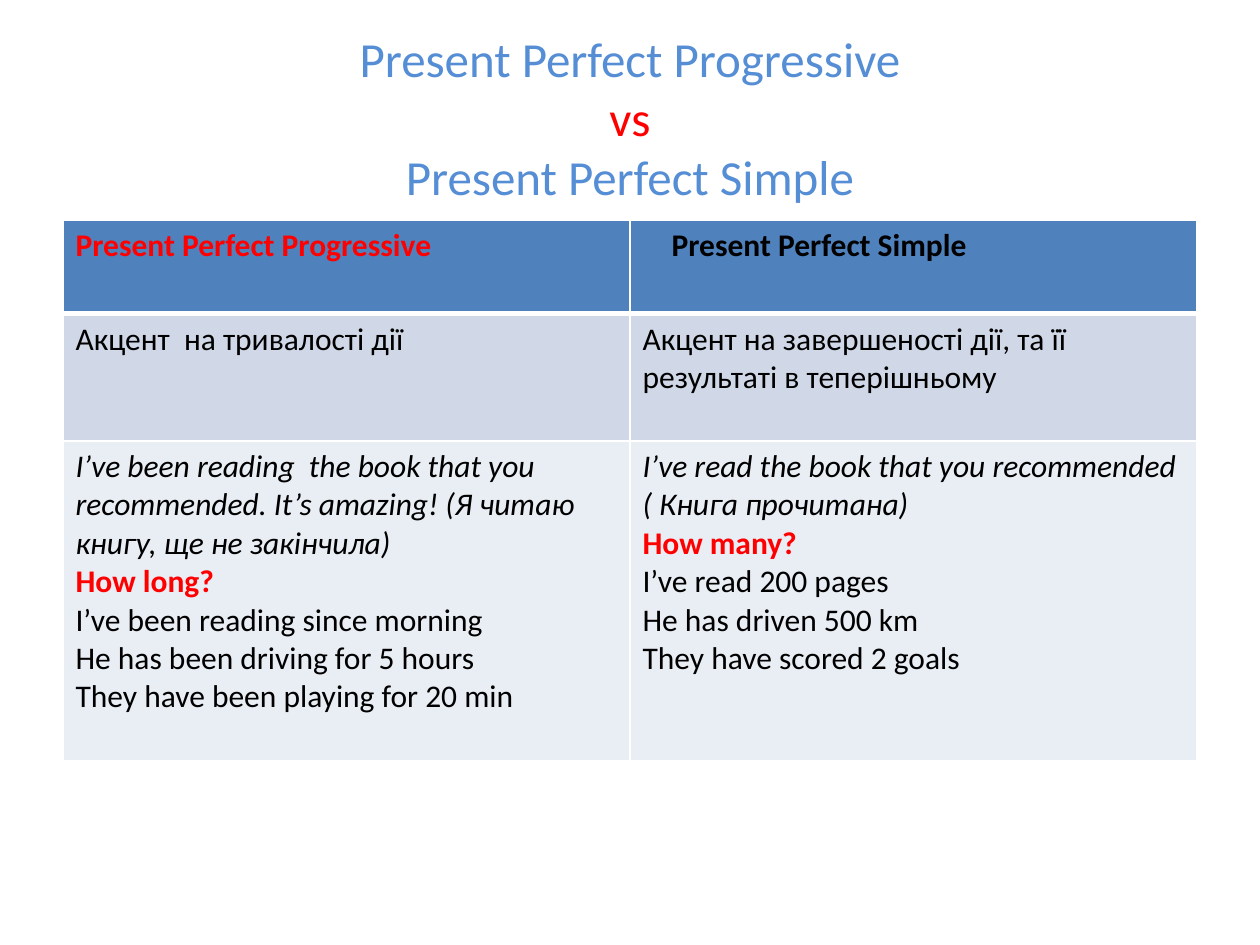
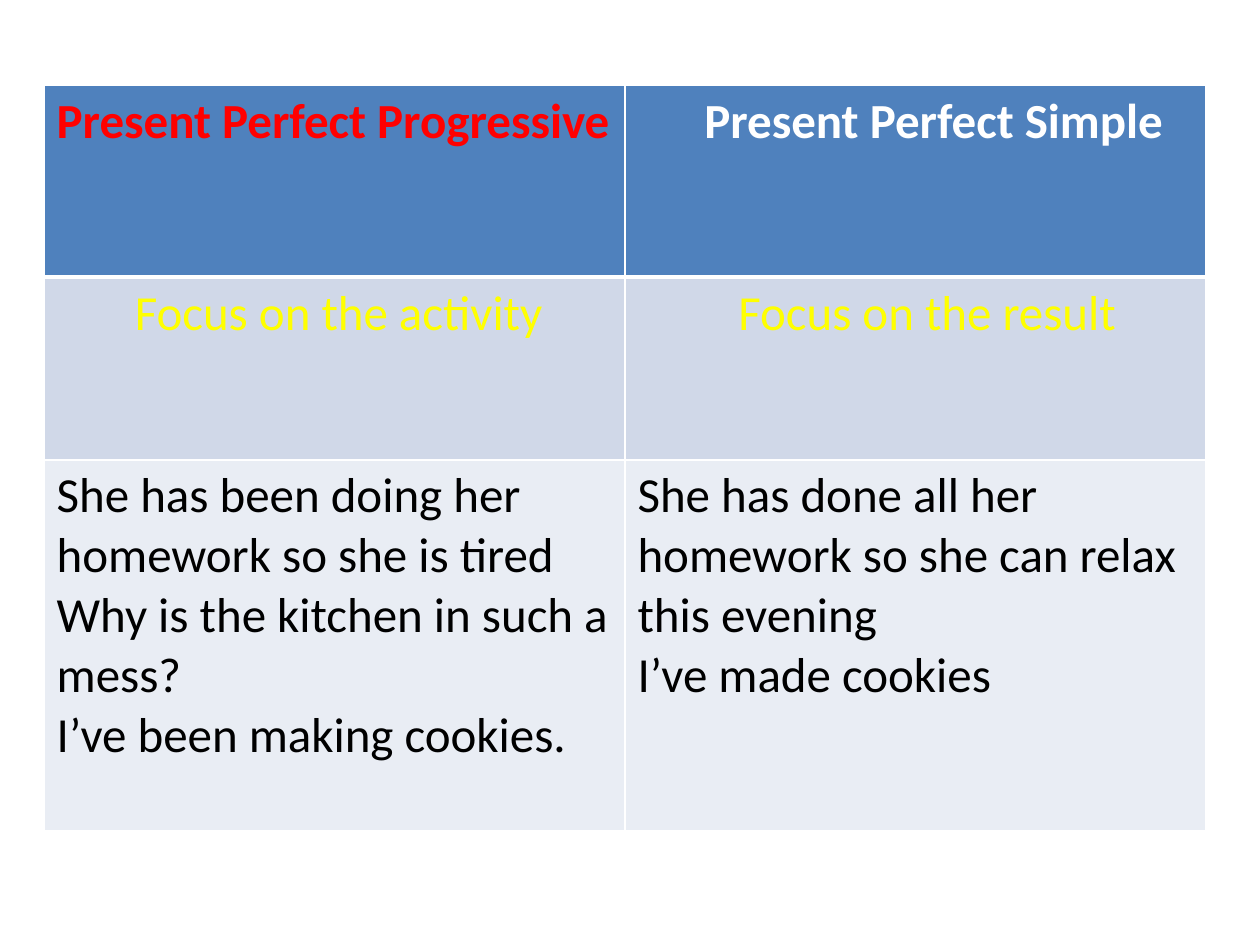
from lxml import etree
from pptx import Presentation
from pptx import util as u
from pptx.dml.color import RGBColor
from pptx.enum import text
from pptx.oxml.ns import qn

C = {
    "title": "558ED5", "red": "FF0000", "black": "000000", "white": "FFFFFF",
    "yellow": "FFFF00", "head": "4F81BD", "band": "D0D8E8", "light": "E9EDF4",
}
FONT = "Calibri"
ROW_FILLS = ["head", "band", "light"]


def write(tf, lines, size, align=text.PP_ALIGN.LEFT):
    tf.text = "\n".join(line[0] for line in lines)
    for p, (_, color, style) in zip(tf.paragraphs, lines):
        p.alignment = align
        f = p.runs[0].font
        f.name, f.size = FONT, u.Pt(size)
        f.bold, f.italic = style == "bold", style == "italic"
        f.color.rgb = RGBColor.from_string(C[color])


def border(cell, row):
    tcPr = cell._tc.get_or_add_tcPr()
    widths = {"lnL": 1, "lnR": 1, "lnT": 3 if row == 1 else 1, "lnB": 3 if row == 0 else 1}
    for i, (side, width) in enumerate(widths.items()):
        ln = etree.Element(qn("a:" + side), w=str(u.Pt(width)))
        fill = etree.SubElement(ln, qn("a:solidFill"))
        etree.SubElement(fill, qn("a:srgbClr"), val=C["white"])
        tcPr.insert(i, ln)


prs = Presentation()
prs.slide_width, prs.slide_height = u.Inches(10), u.Inches(7.5)

tables = [
    {
        "at": (0.5, 1.75), "col": 4.5, "rows": [0.74, 1.01, 2.54], "size": 18,
        "indents": {(0, 1): 0.23},
        "cells": [
            [[("Present Perfect Progressive", "red", "bold")],
             [("Present Perfect Simple", "black", "bold")]],
            [[("Акцент  на тривалості дії", "black", "")],
             [("Акцент на завершеності дії, та її результаті в теперішньому", "black", "")]],
            [[("I’ve been reading  the book that you recommended. It’s amazing! "
               "(Я читаю книгу, ще не закінчила)", "black", "italic"),
              ("How long?", "red", "bold"),
              ("I’ve been reading since morning", "black", ""),
              ("He has been driving for 5 hours", "black", ""),
              ("They have been playing for 20 min", "black", "")],
             [("I’ve read the book that you recommended ( Книга прочитана)", "black", "italic"),
              ("How many?", "red", "bold"),
              ("I’ve read 200 pages", "black", ""),
              ("He has driven 500 km", "black", ""),
              ("They have scored 2 goals", "black", "")]],
        ],
    },
    {
        "at": (0.35, 0.68), "col": 4.61, "rows": [1.52, 1.45, 2.94], "size": 28,
        "indents": {(0, 1): 0.53, (1, 0): 0.62, (1, 1): 0.8},
        "cells": [
            [[("Present Perfect Progressive", "red", "bold")],
             [("Present Perfect Simple", "white", "bold")]],
            [[("Focus on the activity", "yellow", "")],
             [("Focus on the result", "yellow", "")]],
            [[("She has been doing her homework so she is tired", "black", ""),
              ("Why is the kitchen in such a mess?", "black", ""),
              ("I’ve been making cookies.", "black", "")],
             [("She has done all her homework so she can relax this evening", "black", ""),
              ("I’ve made cookies", "black", "")]],
        ],
    },
]

for t in tables:
    s = prs.slides.add_slide(prs.slide_layouts[6])
    left, top = t["at"]
    tbl = s.shapes.add_table(3, 2, u.Inches(left), u.Inches(top),
                             u.Inches(2 * t["col"]), u.Inches(sum(t["rows"]))).table
    for col in tbl.columns:
        col.width = u.Inches(t["col"])
    for r, height in enumerate(t["rows"]):
        tbl.rows[r].height = u.Inches(height)
        for c, lines in enumerate(t["cells"][r]):
            cell = tbl.cell(r, c)
            cell.margin_left = u.Inches(0.1 + t["indents"].get((r, c), 0))
            cell.fill.solid()
            cell.fill.fore_color.rgb = RGBColor.from_string(C[ROW_FILLS[r]])
            border(cell, r)
            write(cell.text_frame, lines, t["size"])

title = prs.slides[0].shapes.add_textbox(u.Inches(0.5), u.Inches(0.3), u.Inches(9), u.Inches(1.25))
tf = title.text_frame
tf.word_wrap = True
tf.vertical_anchor = text.MSO_ANCHOR.MIDDLE
write(tf, [("Present Perfect Progressive", "title", ""), ("vs", "red", ""),
           ("Present Perfect Simple", "title", "")], 28, text.PP_ALIGN.CENTER)

prs.save("out.pptx")
